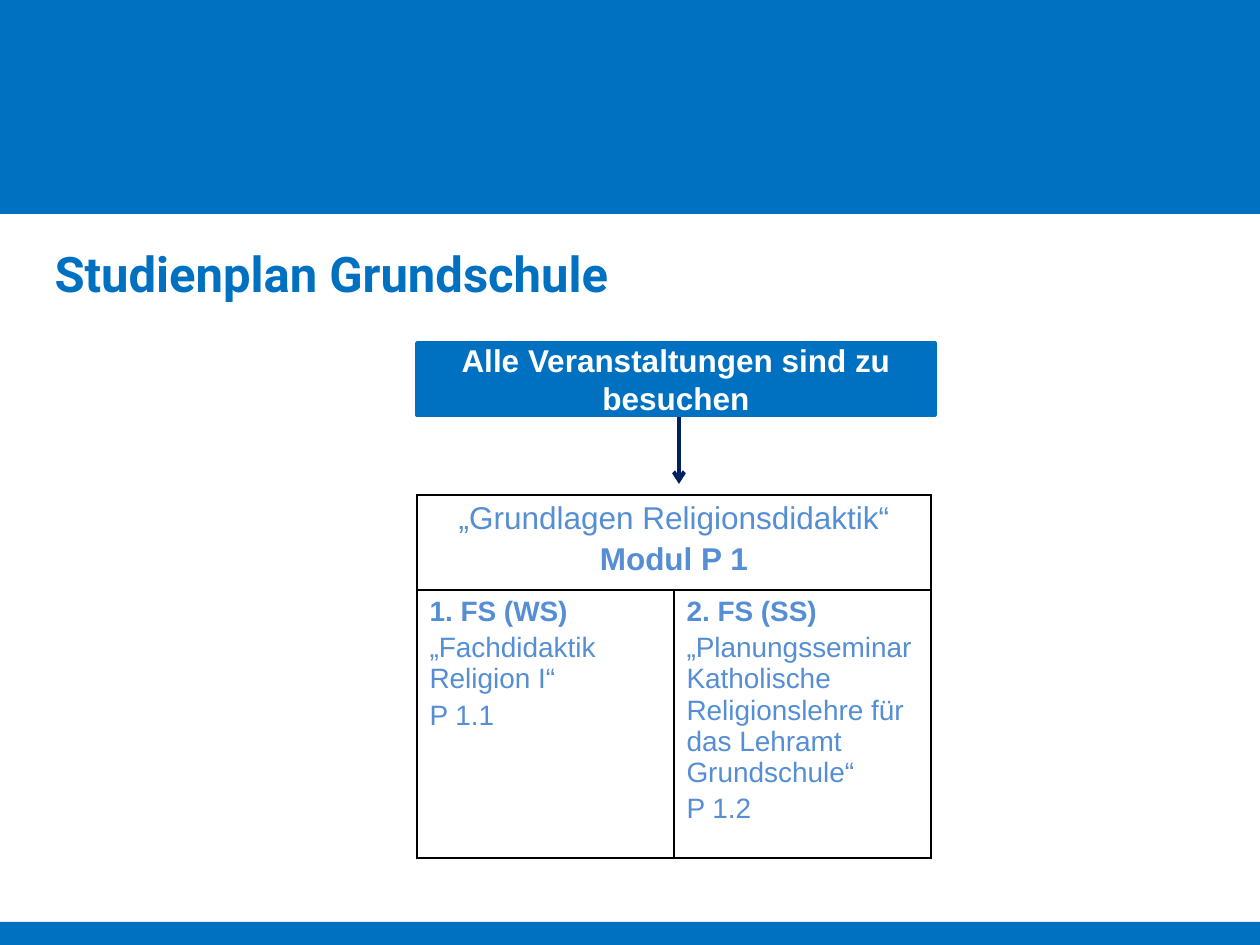
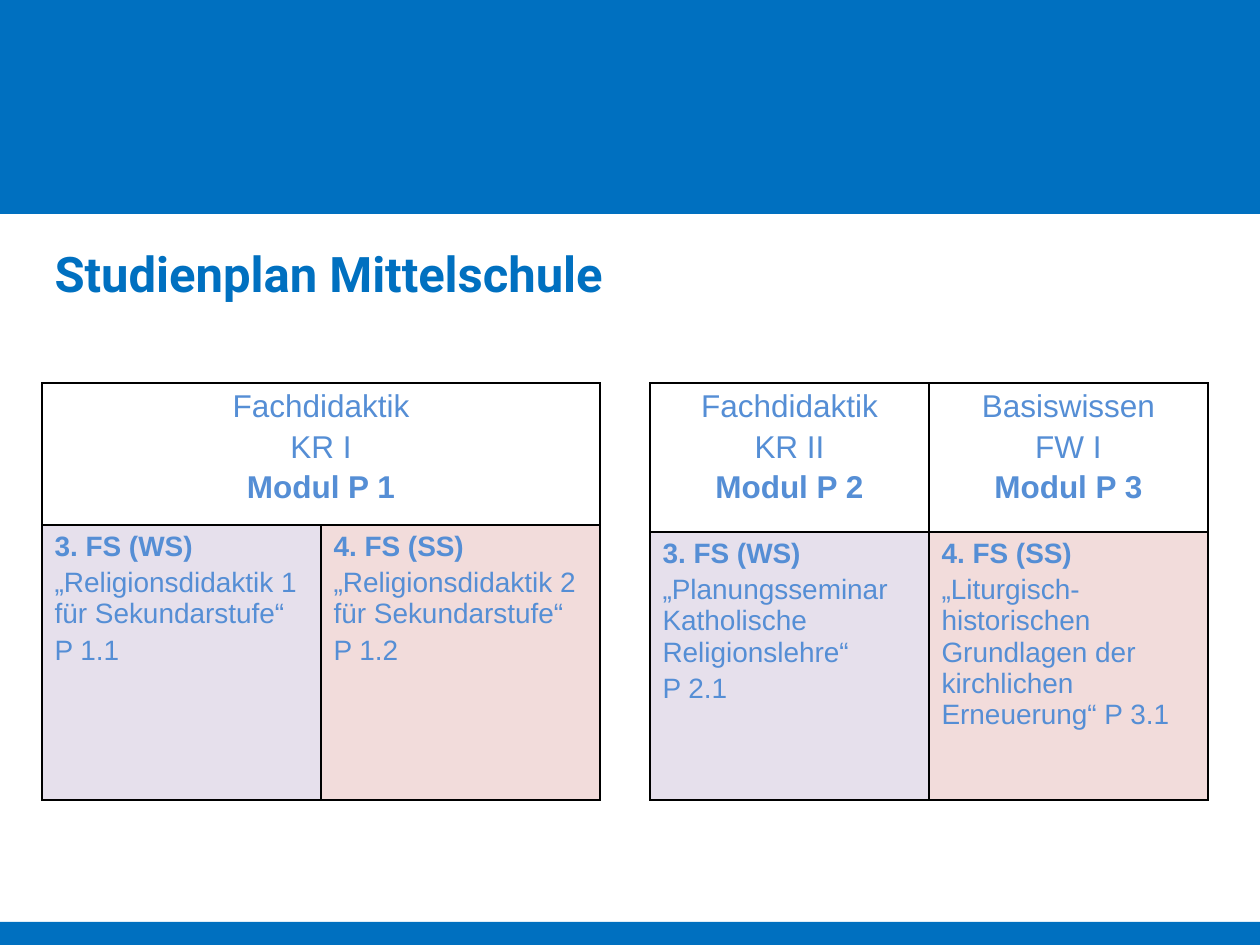
import lxml.etree
import pptx
import pptx.dml.color
import pptx.enum.shapes
import pptx.enum.text
import pptx.oxml
import pptx.oxml.ns
import pptx.util

PX = 914400 / 126
BLUE, NAVY, TEXT_BLUE = "0070C0", "002060", "558ED5"
WHITE, BLACK, LILAC, ROSE = "FFFFFF", "000000", "E6E0EC", "F2DCDB"
RECTANGLE = pptx.enum.shapes.MSO_SHAPE.RECTANGLE
ALIGN = pptx.enum.text.PP_ALIGN
ANCHOR = pptx.enum.text.MSO_ANCHOR
qn = pptx.oxml.ns.qn


def px(*lengths):
    """Turn pixel lengths into a list of EMU lengths."""
    return [pptx.util.Emu(round(length * PX)) for length in lengths]


def color(target, hex_color):
    """Colour a font, or make a fill solid in the colour."""
    if hasattr(target, "solid"):
        target.solid()
        target = target.fore_color
    else:
        target = target.color
    target.rgb = pptx.dml.color.RGBColor.from_string(hex_color)


# Each table: left, top, column width, row heights, body fills, rows of cells.
# A header row with one cell spans both columns.
plans = [
    ("Studienplan Grundschule", [
        (417, 495, 257, (95, 268), (WHITE, WHITE), [
            [["„Grundlagen Religionsdidaktik“", "Modul P 1"]],
            [["1. FS (WS)", "„Fachdidaktik Religion I“", "P 1.1"],
             ["2. FS (SS)", "„Planungsseminar Katholische Religionslehre "
              "für das Lehramt Grundschule“", "P 1.2"]],
        ]),
    ]),
    ("Studienplan Mittelschule", [
        (42, 383, 279, (142, 275), (LILAC, ROSE), [
            [["Fachdidaktik", "KR I", "Modul P 1"]],
            [["3. FS (WS)", "„Religionsdidaktik 1 für Sekundarstufe“", "P 1.1"],
             ["4. FS (SS)", "„Religionsdidaktik 2 für Sekundarstufe“", "P 1.2"]],
        ]),
        (650, 383, 279, (149, 268), (LILAC, ROSE), [
            [["Fachdidaktik", "KR II", "Modul P 2"],
             ["Basiswissen", "FW I", "Modul P 3"]],
            [["3. FS (WS)", "„Planungsseminar Katholische Religionslehre“", "P 2.1"],
             ["4. FS (SS)", "„Liturgisch-historischen Grundlagen der "
              "kirchlichen Erneuerung“ P 3.1"]],
        ]),
    ]),
]

deck = pptx.Presentation()
deck.slide_width, deck.slide_height = px(1260, 945)
layout = deck.slide_layouts[5]
pages = []

for title_text, tables in plans:
    page = deck.slides.add_slide(layout)
    pages.append(page)
    title = page.shapes.title
    title.left, title.top, title.width, title.height = px(42, 237, 1071, 72)
    title.text_frame.text = title_text
    title.text_frame.vertical_anchor = ANCHOR.TOP
    title.text_frame.auto_size = pptx.enum.text.MSO_AUTO_SIZE.NONE
    para = title.text_frame.paragraphs[0]
    para.alignment = ALIGN.LEFT
    para.font.name, para.font.size, para.font.bold = "Roboto", pptx.util.Pt(28), True
    color(para.font, BLUE)

    for left, top, column_width, row_heights, body_fills, rows in tables:
        table = page.shapes.add_table(
            2, 2, *px(left, top, 2 * column_width, sum(row_heights))).table
        table.first_row = table.horz_banding = False
        for column in table.columns:
            column.width = px(column_width)[0]
        for row, height in zip(table.rows, row_heights):
            row.height = px(height)[0]
        if len(rows[0]) == 1:
            table.cell(0, 0).merge(table.cell(0, 1))

        for cell in table.iter_cells():
            properties = cell._tc.get_or_add_tcPr()
            for side in ("lnL", "lnR", "lnT", "lnB"):
                border = lxml.etree.SubElement(properties, qn(f"a:{side}"), w="12700")
                fill = lxml.etree.SubElement(border, qn("a:solidFill"))
                lxml.etree.SubElement(fill, qn("a:srgbClr"), val=BLACK)

        for row_index, row_cells in enumerate(rows):
            is_header = row_index == 0
            for column_index, lines in enumerate(row_cells):
                cell = table.cell(row_index, column_index)
                color(cell.fill, WHITE if is_header else body_fills[column_index])
                cell.text_frame.text = "\n".join(lines)
                bold_line = len(lines) - 1 if is_header else 0
                for line_index, para in enumerate(cell.text_frame.paragraphs):
                    para.alignment = ALIGN.CENTER if is_header else ALIGN.LEFT
                    if line_index:
                        para.space_before = pptx.util.Pt(3)
                    para.font.name = "Arial"
                    para.font.size = pptx.util.Pt(18 if is_header else 16)
                    para.font.bold = line_index == bold_line
                    color(para.font, TEXT_BLUE)

# Bands shared by both pages live on the layout, behind its placeholders.
for number, (top, height) in enumerate([(0, 214), (922, 23)]):
    band = pages[0].shapes.add_shape(RECTANGLE, *px(0, top, 1260, height))
    band.shadow.inherit = False
    color(band.fill, BLUE)
    band.line.fill.background()
    band.element.nvSpPr.cNvPr.set("id", str(100 + number))
    layout.shapes.element.insert(2, band.element)

# Notice above the primary school table, with an arrow down to it.
notice = pages[0].shapes.add_shape(RECTANGLE, *px(417, 343, 518, 72))
notice.shadow.inherit = False
color(notice.fill, BLUE)
color(notice.line.fill, BLUE)
notice.line.width = pptx.util.Pt(2)
notice.text_frame.word_wrap = True
notice.text_frame.vertical_anchor = ANCHOR.MIDDLE
notice.text_frame.margin_top = notice.text_frame.margin_bottom = 0
notice.text_frame.text = "Alle Veranstaltungen sind zu besuchen"
para = notice.text_frame.paragraphs[0]
para.alignment = ALIGN.CENTER
para.font.name, para.font.size, para.font.bold = "Arial", pptx.util.Pt(18), True
color(para.font, WHITE)

arrow = pages[0].shapes.add_connector(
    pptx.enum.shapes.MSO_CONNECTOR.STRAIGHT, *px(679, 417, 679, 484))
color(arrow.line.fill, NAVY)
arrow.line.width = pptx.util.Pt(2.25)
lxml.etree.SubElement(arrow.line._get_or_add_ln(), qn("a:tailEnd"), type="arrow")
lxml.etree.SubElement(arrow.element.spPr, qn("a:effectLst"))

deck.save("out.pptx")
